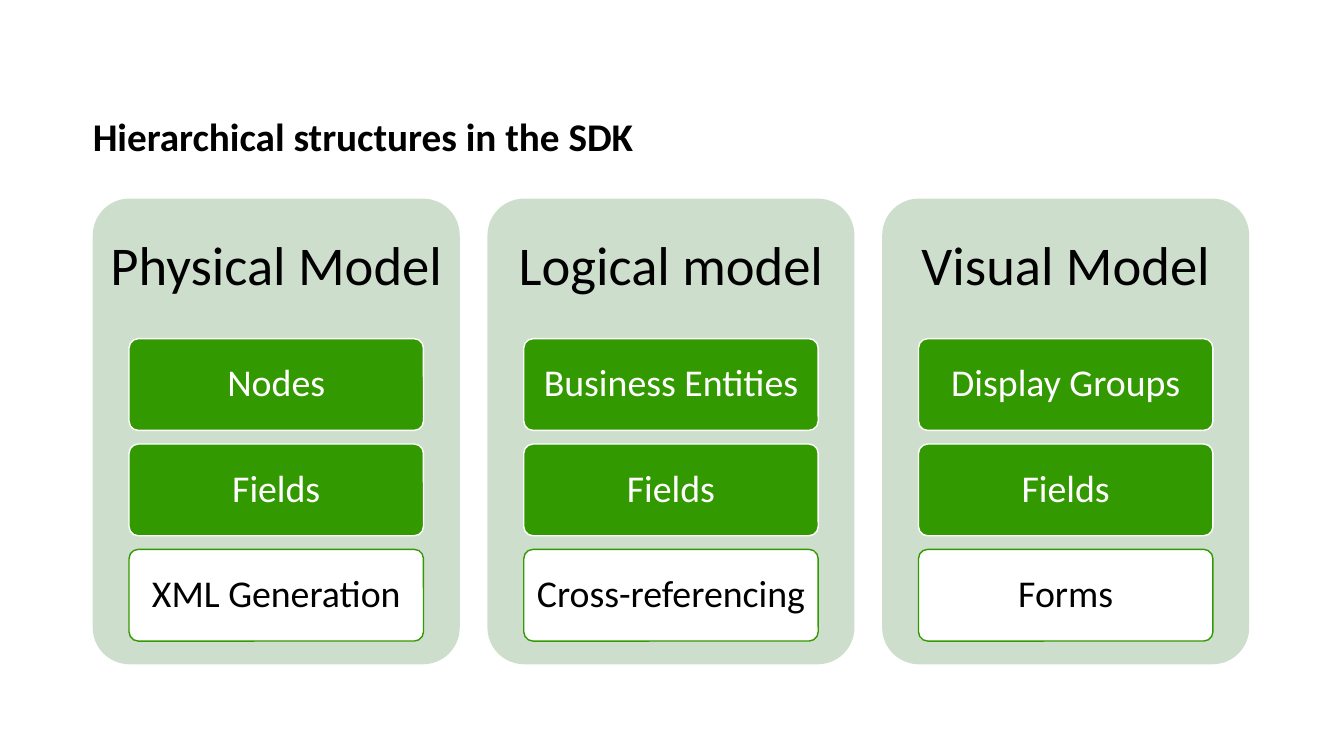
from pptx import Presentation
from pptx.dml.color import RGBColor
from pptx.enum import shapes, text
from pptx.util import Inches, Pt

GREEN, PALE, WHITE, BLACK = "339900", "CEDECC", "FFFFFF", "000000"
MODELS = [
    ("Physical Model", ["Nodes", "Fields", "XML Generation"]),
    ("Logical model", ["Business Entities", "Fields", "Cross-referencing"]),
    ("Visual Model", ["Display Groups", "Fields", "Forms"]),
]
LEFT, TOP = 0.92, 1.97
PANEL_W, PANEL_H, PANEL_STEP = 3.64, 4.62, 3.915
HEADING_H = 1.38
LEVEL_W, LEVEL_H, LEVEL_STEP = 2.92, 0.91, 1.045
LEVEL_TOP = 3.36


def rgb(value):
    """Turn a hex string into a colour."""
    return RGBColor.from_string(value)


def write(holder, words, size, color=BLACK, bold=False, align=text.PP_ALIGN.CENTER,
          anchor=text.MSO_ANCHOR.MIDDLE, insets=(0.07, 0.06, 0.07, 0.06)):
    """Put one formatted paragraph into a shape."""
    frame = holder.text_frame
    frame.word_wrap = True
    frame.auto_size = text.MSO_AUTO_SIZE.NONE
    frame.vertical_anchor = anchor
    (frame.margin_left, frame.margin_top,
     frame.margin_right, frame.margin_bottom) = map(Inches, insets)
    frame.text = words
    paragraph = frame.paragraphs[0]
    paragraph.alignment = align
    paragraph.line_spacing = 0.9
    font = paragraph.runs[0].font
    font.name, font.size, font.bold = "Calibri", Pt(size), bold
    font.color.rgb = rgb(color)


def add_title(slide, words):
    """Place and fill the title placeholder."""
    title = slide.shapes.title
    title.left, title.top, title.width, title.height = map(Inches, (LEFT, 0.14, 11.48, 1.45))
    write(title, words, 28, bold=True, align=text.PP_ALIGN.LEFT,
          anchor=text.MSO_ANCHOR.BOTTOM, insets=(0, 0.05, 0, 0))


def add_rounded(slide, left, top, width, height, fill, line=None):
    """Draw a rounded rectangle with an optional outline."""
    box = slide.shapes.add_shape(shapes.MSO_SHAPE.ROUNDED_RECTANGLE,
                                 *map(Inches, (left, top, width, height)))
    box.adjustments[0] = 0.1
    box.shadow.inherit = False
    box.fill.solid()
    box.fill.fore_color.rgb = rgb(fill)
    if line:
        box.line.color.rgb = rgb(line)
        box.line.width = Pt(1)
    else:
        box.line.fill.background()
    return box


def add_model(slide, left, heading, levels):
    """Draw a model panel with its heading and stacked levels."""
    add_rounded(slide, left, TOP, PANEL_W, PANEL_H, PALE)
    caption = slide.shapes.add_textbox(*map(Inches, (left, TOP, PANEL_W, HEADING_H)))
    write(caption, heading, 39, insets=(0.1, 0.16, 0.1, 0.16))
    level_left = left + (PANEL_W - LEVEL_W) / 2
    for row, label in enumerate(levels):
        is_last = row == len(levels) - 1
        fill, line, color = (WHITE, GREEN, BLACK) if is_last else (GREEN, WHITE, WHITE)
        level = add_rounded(slide, level_left, LEVEL_TOP + row * LEVEL_STEP,
                            LEVEL_W, LEVEL_H, fill, line)
        write(level, label, 27, color)


def main():
    """Build and save the slide."""
    deck = Presentation()
    deck.slide_width, deck.slide_height = Inches(13.33), Inches(7.5)
    slide = deck.slides.add_slide(deck.slide_layouts[5])
    add_title(slide, "Hierarchical structures in the SDK")
    for column, (heading, levels) in enumerate(MODELS):
        add_model(slide, LEFT + column * PANEL_STEP, heading, levels)
    deck.save("out.pptx")


if __name__ == "__main__":
    main()
